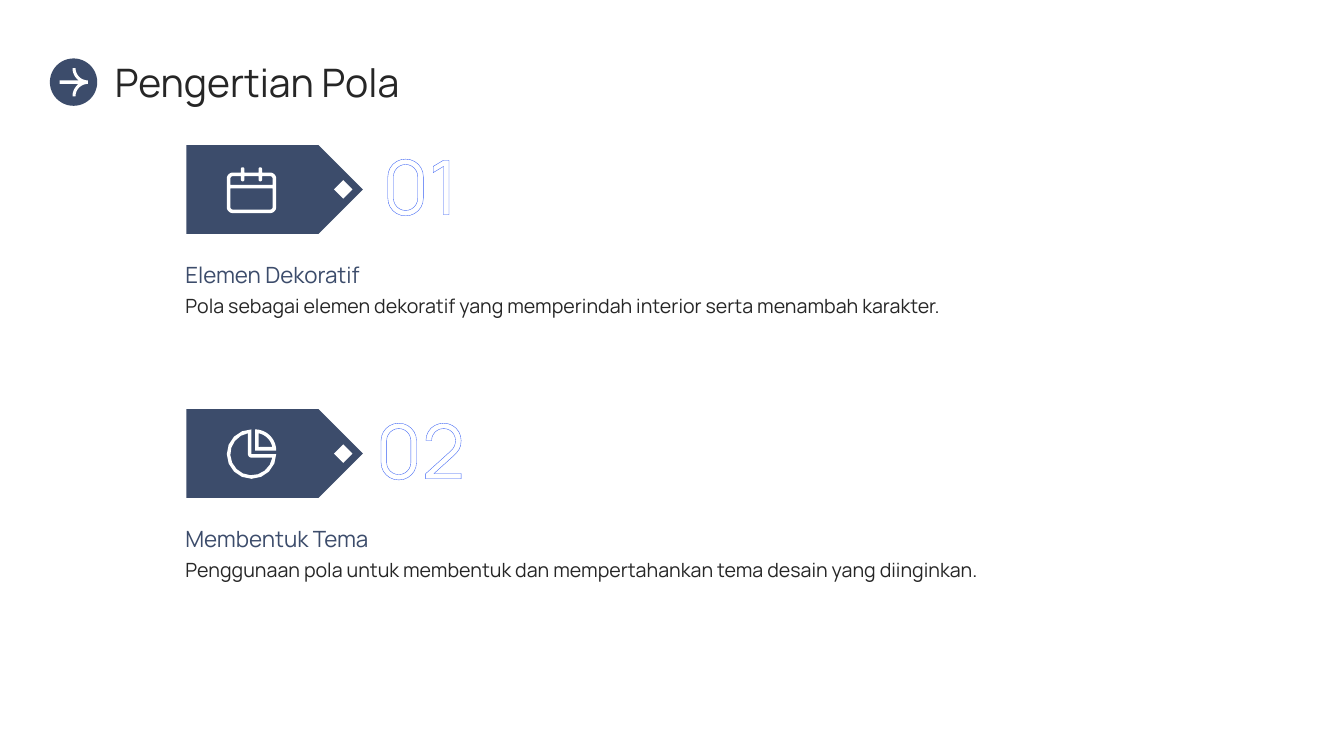
from dataclasses import dataclass
from math import cos, radians, sin

from lxml.etree import SubElement
from pptx import Presentation
from pptx.dml.color import RGBColor
from pptx.enum.shapes import MSO_SHAPE
from pptx.enum.text import MSO_ANCHOR, PP_ALIGN
from pptx.oxml.ns import qn
from pptx.shapes.autoshape import Shape
from pptx.slide import Slide
from pptx.util import Emu, Inches, Pt

NAVY = RGBColor(0x3C, 0x4C, 0x6B)
INK = RGBColor(0x26, 0x26, 0x26)
BLUE = RGBColor(0x38, 0x60, 0xF4)
WHITE = RGBColor(0xFF, 0xFF, 0xFF)
FONT = "Manrope"

WIDTH, HEIGHT = Inches(13.333), Inches(7.5)
ROWS = 90
ICON_STEP = 0.21
ARC_STEPS = 12
FIRST_ROW, ROW_STEP = 17.28, 31.44
TEXT_COLUMN, TEXT_SPAN = 22.08, 115.68


@dataclass(frozen=True)
class Box:
    column: float
    row: float
    columns: float
    rows: float


@dataclass(frozen=True)
class Arc:
    x: float
    y: float
    radius: float = 0
    start: float = 0
    end: float = 0

    def points(self) -> list[tuple[float, float]]:
        steps = ARC_STEPS if self.radius else 0
        angles = [radians(self.start + (self.end - self.start) * step / max(steps, 1))
                  for step in range(steps + 1)]
        return [(self.x + self.radius * cos(angle), self.y + self.radius * sin(angle))
                for angle in angles]


Outline = list[Arc]


@dataclass(frozen=True)
class Topic:
    number: str
    heading: str
    body: str
    icon: list[Outline]
    icon_offset: float


def peg_top(x: float) -> Outline:
    return [Arc(x - 1, 3), Arc(x, 1, 1, 180, 360), Arc(x + 1, 3)]


def peg_bottom(x: float) -> Outline:
    return [Arc(x + 1, 5), Arc(x, 7, 1, 0, 180), Arc(x - 1, 5)]


CALENDAR: list[Outline] = [
    [Arc(3.5, 6.5, 3.5, 180, 270), *peg_top(9), *peg_top(19),
     Arc(24.5, 6.5, 3.5, 270, 360), Arc(24.5, 22.5, 3.5, 0, 90),
     Arc(3.5, 22.5, 3.5, 90, 180)],
    [Arc(3.5, 6.5, 1.5, 270, 180), Arc(2, 10), Arc(26, 10),
     Arc(24.5, 6.5, 1.5, 360, 270), *peg_bottom(19), *peg_bottom(9)],
    [Arc(2, 12), Arc(26, 12), Arc(24.5, 22.5, 1.5, 0, 90),
     Arc(3.5, 22.5, 1.5, 90, 180)],
]
PIE: list[Outline] = [
    [Arc(14, 14, 14, 0, 270), Arc(14, 14)],
    [Arc(14, 14, 12, 9.5, 260.5), Arc(14, 14, 2, 180, 90)],
    [Arc(16, 12, 12, 270, 360), Arc(16, 12)],
    [Arc(16, 12, 10, 282, 348), Arc(18, 10)],
]
ARROW: list[Outline] = [
    [Arc(0, 7), Arc(16, 0, 8.7, 127, 180), Arc(16, 0, 7, 180, 90),
     Arc(16, 16, 7, 270, 180), Arc(16, 16, 8.7, 180, 233), Arc(0, 9)],
]

TOPICS = [
    Topic("01", "Elemen Dekoratif",
          "Pola sebagai elemen dekoratif yang memperindah interior serta menambah karakter.",
          CALENDAR, 2.64),
    Topic("02", "Membentuk Tema",
          "Penggunaan pola untuk membentuk dan mempertahankan tema desain yang diinginkan.",
          PIE, 2.4),
]


def grid(units: float) -> Emu:
    return Emu(round(units * HEIGHT / ROWS))


def frame(box: Box) -> tuple[Emu, Emu, Emu, Emu]:
    return grid(box.column), grid(box.row), grid(box.columns), grid(box.rows)


def paint(shape: Shape, color: RGBColor) -> None:
    shape.shadow.inherit = False
    shape.fill.solid()
    shape.fill.fore_color.rgb = color
    shape.line.fill.background()


def add_preset(slide: Slide, kind: MSO_SHAPE, box: Box, color: RGBColor,
               rotation: float = 0) -> None:
    shape = slide.shapes.add_shape(kind, *frame(box))
    shape.rotation = rotation
    paint(shape, color)


def add_icon(slide: Slide, outlines: list[Outline], column: float, row: float) -> None:
    contours = [[(grid(column + x * ICON_STEP), grid(row + y * ICON_STEP))
                 for arc in outline for x, y in arc.points()] for outline in outlines]
    builder = slide.shapes.build_freeform(*contours[0][0])
    for index, contour in enumerate(contours):
        if index:
            builder.move_to(*contour[0])
        builder.add_line_segments(contour[1:], close=True)
    paint(builder.convert_to_shape(), WHITE)


def add_text(slide: Slide, text: str, box: Box, *, size: float, color: RGBColor,
             anchor: MSO_ANCHOR = MSO_ANCHOR.TOP, align: PP_ALIGN = PP_ALIGN.LEFT,
             outline: RGBColor | None = None) -> None:
    text_frame = slide.shapes.add_textbox(*frame(box)).text_frame
    text_frame.word_wrap = True
    text_frame.vertical_anchor = anchor
    text_frame.margin_left = text_frame.margin_right = 0
    text_frame.margin_top = text_frame.margin_bottom = 0
    paragraph = text_frame.paragraphs[0]
    paragraph.alignment = align
    run = paragraph.add_run()
    run.text = text
    run.font.name = FONT
    run.font.size = Pt(size)
    run.font.color.rgb = color
    if outline is not None:
        properties = run.font._element
        line = SubElement(properties, qn("a:ln"), w=str(Pt(1.25)))
        fill = SubElement(line, qn("a:solidFill"))
        SubElement(fill, qn("a:srgbClr"), val=str(outline))
        properties.insert(0, line)


def add_topic(slide: Slide, topic: Topic, row: float) -> None:
    add_text(slide, topic.body, Box(TEXT_COLUMN, row + 17.7, TEXT_SPAN, 14.16),
             size=14, color=INK)
    add_preset(slide, MSO_SHAPE.PENTAGON, Box(22.2, row, 21, 10.56), NAVY)
    add_text(slide, topic.number, Box(43.8, row - 0.72, 12.48, 12.96),
             size=54, color=WHITE, align=PP_ALIGN.CENTER, outline=BLUE)
    add_preset(slide, MSO_SHAPE.RECTANGLE, Box(40.08, row + 4.5, 1.56, 1.56),
               WHITE, rotation=45)
    add_icon(slide, topic.icon, 27, row + topic.icon_offset)
    add_text(slide, topic.heading, Box(TEXT_COLUMN, row + 12.24, TEXT_SPAN, 4.8),
             size=16, color=NAVY, anchor=MSO_ANCHOR.BOTTOM)


def main() -> None:
    presentation = Presentation()
    presentation.slide_width, presentation.slide_height = WIDTH, HEIGHT
    slide = presentation.slides.add_slide(presentation.slide_layouts[6])
    for index, topic in enumerate(TOPICS):
        add_topic(slide, topic, FIRST_ROW + index * ROW_STEP)
    add_text(slide, "Pengertian Pola", Box(13.68, 6.96, 137.4, 5.64),
             size=28, color=INK, anchor=MSO_ANCHOR.MIDDLE)
    add_preset(slide, MSO_SHAPE.OVAL, Box(5.94, 6.96, 5.64, 5.64), NAVY)
    add_icon(slide, ARROW, 7.1, 8.1)
    presentation.save("out.pptx")


if __name__ == "__main__":
    main()
